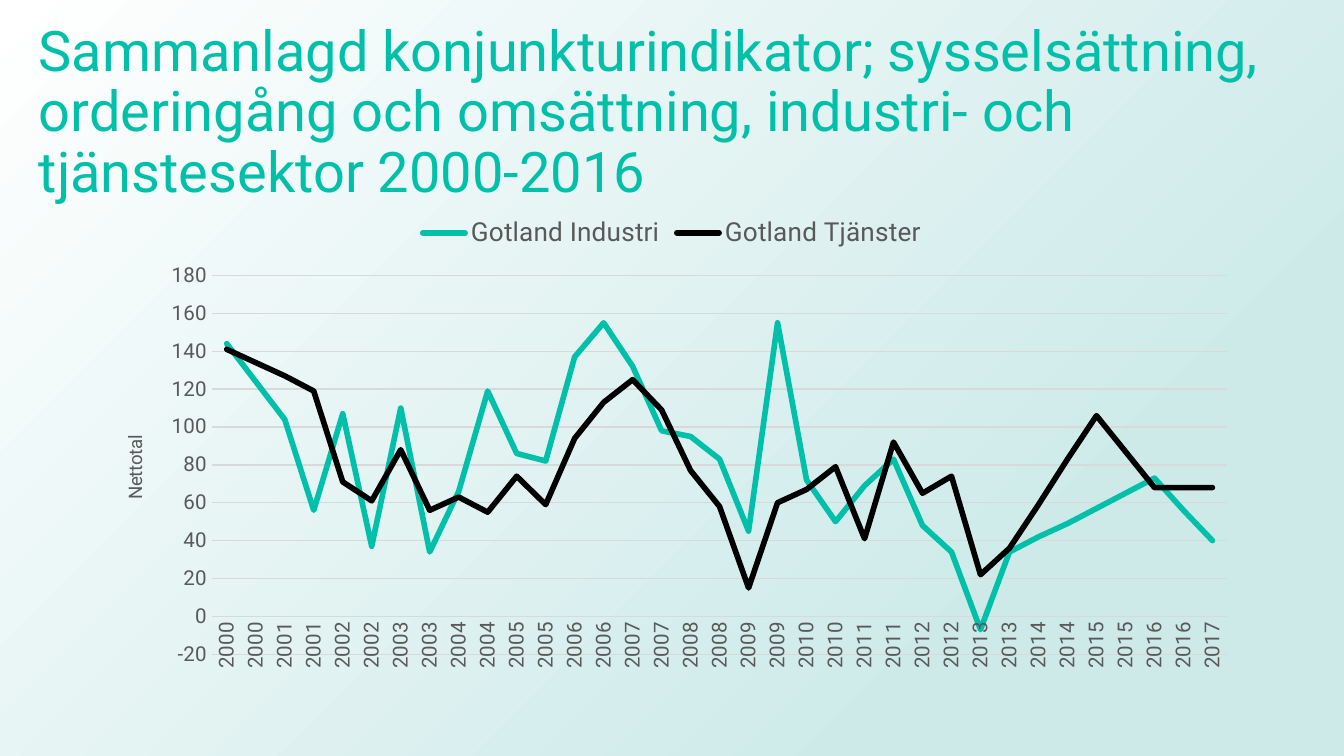
from lxml.etree import SubElement
from pptx import Presentation
from pptx.chart.data import CategoryChartData
from pptx.dml.color import RGBColor
from pptx.enum.chart import XL_CHART_TYPE, XL_LEGEND_POSITION, XL_TICK_MARK
from pptx.enum.shapes import MSO_SHAPE
from pptx.enum.text import MSO_ANCHOR
from pptx.oxml.ns import qn
from pptx.util import Inches, Pt

FONT = "Roboto"
COLORS = {"teal": "00C0A9", "black": "000000", "label": "595959",
          "grid": "D9D9D9", "mint": "CDEAE9", "white": "FFFFFF"}
SLIDE_WIDTH = Inches(10)
SLIDE_HEIGHT = SLIDE_WIDTH * 9 // 16
# Left, top, width, height in inches
CHART_BOX = (0.69, 1.5, 8.62, 3.56)
PLOT_BOX = (1.58, 2.05, 7.55, 2.82)
AXIS_TITLE_CORNER = (0.89, 3.21)

HEADING = ("Sammanlagd konjunkturindikator; sysselsättning, orderingång och "
           "omsättning, industri- och tjänstesektor 2000-2016")
AXIS_TITLE = "Nettotal"
# Two surveys a year, the last one early in 2017
YEARS = [str(2000 + survey // 2) for survey in range(35)]
SECTORS = [
    ("Gotland Industri", "teal",
     [144, 124, 104, 56, 107, 37, 110, 34, 66, 119, 86, 82, 137, 155, 132, 98, 95, 83,
      45, 155, 72, 50, 69, 83, 48, 34, -7, 34, 42, 49, 57, 65, 73, 56, 40]),
    ("Gotland Tjänster", "black",
     [141, 134, 127, 119, 71, 61, 88, 56, 63, 55, 74, 59, 94, 113, 125, 109, 77, 58,
      15, 60, 67, 79, 41, 92, 65, 74, 22, 36, 59, 83, 106, 87, 68, 68, 68]),
]


def rgb(name):
    return RGBColor.from_string(COLORS[name])


def style_font(font, size, color):
    font.name, font.size, font.bold = FONT, Pt(size), False
    font.color.rgb = rgb(color)


def set_layout(element, index, left, top, width=None, height=None):
    """Place a chart part, given in slide inches, as fractions of the chart."""
    chart_left, chart_top, chart_width, chart_height = CHART_BOX
    fractions = {"x": (left - chart_left) / chart_width,
                 "y": (top - chart_top) / chart_height}
    for old in element.findall(qn("c:layout")):
        element.remove(old)
    layout = SubElement(element, qn("c:layout"))
    element.insert(index, layout)
    manual = SubElement(layout, qn("c:manualLayout"))
    if width:
        fractions.update(w=width / chart_width, h=height / chart_height)
        SubElement(manual, qn("c:layoutTarget")).set("val", "inner")
    for mode in ("xMode", "yMode"):
        SubElement(manual, qn(f"c:{mode}")).set("val", "edge")
    for key, value in fractions.items():
        SubElement(manual, qn(f"c:{key}")).set("val", f"{value:.4f}")


def add_backdrop(slide):
    backdrop = slide.shapes.add_shape(MSO_SHAPE.RECTANGLE, 0, 0, SLIDE_WIDTH, SLIDE_HEIGHT)
    backdrop.shadow.inherit = False
    backdrop.line.fill.background()
    backdrop.fill.gradient()
    for stop, (position, color) in zip(backdrop.fill.gradient_stops,
                                       [(0.23, "mint"), (1, "white")]):
        stop.position = position
        stop.color.rgb = rgb(color)
    gradient = backdrop.element.spPr.find(qn("a:gradFill"))
    gradient.remove(gradient.find(qn("a:lin")))
    radial = SubElement(gradient, qn("a:path"))
    radial.set("path", "circle")
    center = SubElement(radial, qn("a:fillToRect"))
    center.set("l", "100000")
    center.set("t", "100000")


def add_heading(slide):
    heading = slide.shapes.add_textbox(Inches(0.19), Inches(0.3), Inches(10.02), Inches(1.09))
    frame = heading.text_frame
    frame.word_wrap = True
    frame.vertical_anchor = MSO_ANCHOR.MIDDLE
    frame.text = HEADING
    frame.paragraphs[0].line_spacing = 0.9
    style_font(frame.paragraphs[0].runs[0].font, 30, "teal")


def add_indicator_chart(slide):
    data = CategoryChartData(number_format="0")
    data.categories = YEARS
    for name, _, values in SECTORS:
        data.add_series(name, values)
    chart = slide.shapes.add_chart(XL_CHART_TYPE.LINE, *map(Inches, CHART_BOX), data).chart
    style_font(chart.font, 10, "label")
    chart.has_title = False
    chart.has_legend = True
    chart.legend.position = XL_LEGEND_POSITION.TOP
    chart.legend.include_in_layout = False
    style_font(chart.legend.font, 14, "label")

    chart.plots[0].vary_by_categories = False
    for series, (_, color, _) in zip(chart.plots[0].series, SECTORS):
        series.smooth = False
        series.format.line.color.rgb = rgb(color)
        series.format.line.width = Pt(3)
        series.format.line._get_or_add_ln().set("cap", "rnd")

    years, totals = chart.category_axis, chart.value_axis
    for axis in (years, totals):
        axis.major_tick_mark = axis.minor_tick_mark = XL_TICK_MARK.NONE
        style_font(axis.tick_labels.font, 11, "label")
    years._element.find(qn("c:txPr")).find(qn("a:bodyPr")).set("rot", "-5400000")
    totals.minimum_scale, totals.maximum_scale, totals.major_unit = -20, 180, 20
    totals.tick_labels.number_format = "0"
    totals.tick_labels.number_format_is_linked = False
    totals.format.line.fill.background()
    for line in (years.format.line, totals.major_gridlines.format.line):
        line.color.rgb = rgb("grid")
        line.width = Pt(0.75)

    title = totals.axis_title
    title.text_frame.text = AXIS_TITLE
    title.text_frame._txBody.find(qn("a:bodyPr")).set("rot", "-5400000")
    style_font(title.text_frame.paragraphs[0].runs[0].font, 10, "label")
    set_layout(title._element, 1, *AXIS_TITLE_CORNER)
    set_layout(chart._chartSpace.chart.plotArea, 0, *PLOT_BOX)


def main():
    presentation = Presentation()
    presentation.slide_width, presentation.slide_height = SLIDE_WIDTH, SLIDE_HEIGHT
    slide = presentation.slides.add_slide(presentation.slide_layouts[6])
    add_backdrop(slide)
    add_heading(slide)
    add_indicator_chart(slide)
    presentation.save("out.pptx")


if __name__ == "__main__":
    main()
